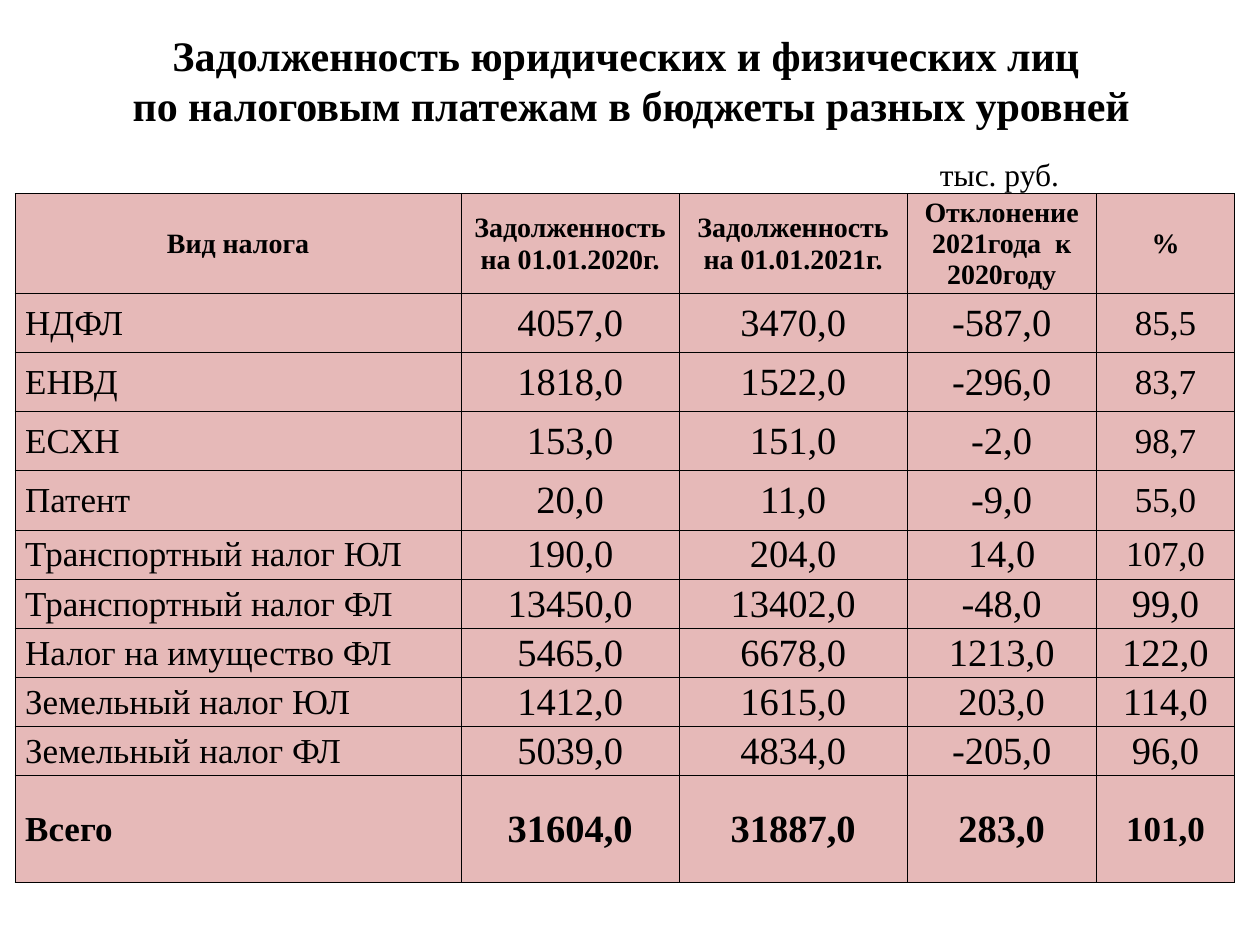
from dataclasses import dataclass

from lxml import etree
from pptx import Presentation
from pptx.dml.color import RGBColor
from pptx.enum import text
from pptx.oxml import ns
from pptx.util import Inches, Pt


@dataclass(frozen=True)
class Theme:
    font: str = "Times New Roman"
    ink: str = "000000"
    cell: str = "E6B9B8"
    title: int = 24
    unit: int = 18
    header: int = 16
    label: int = 20
    value: int = 22
    border: float = 0.5


THEME = Theme()

TITLE = ["Задолженность юридических и физических лиц ",
         "по налоговым платежам в бюджеты разных уровней"]
UNIT = "тыс. руб."
UNIT_COL = 3
HEADERS = ["Вид налога", "Задолженность на 01.01.2020г.",
           "Задолженность на 01.01.2021г.",
           "Отклонение 2021года  к 2020году", "%"]
# Tax, debt in 2020, debt in 2021, change, percent, size of the percent
TAXES = [
    ("НДФЛ", "4057,0", "3470,0", "-587,0", "85,5", THEME.label),
    ("ЕНВД", "1818,0", "1522,0", "-296,0", "83,7", THEME.label),
    ("ЕСХН", "153,0", "151,0", "-2,0", "98,7", THEME.label),
    ("Патент", "20,0", "11,0", "-9,0", "55,0", THEME.label),
    ("Транспортный налог ЮЛ", "190,0", "204,0", "14,0", "107,0", THEME.label),
    ("Транспортный налог ФЛ", "13450,0", "13402,0", "-48,0", "99,0", THEME.value),
    ("Налог на имущество ФЛ", "5465,0", "6678,0", "1213,0", "122,0", THEME.value),
    ("Земельный налог ЮЛ", "1412,0", "1615,0", "203,0", "114,0", THEME.value),
    ("Земельный налог ФЛ", "5039,0", "4834,0", "-205,0", "96,0", THEME.value),
    ("Всего", "31604,0", "31887,0", "283,0", "101,0", THEME.label),
]
COL_WIDTHS = [3.54, 1.73, 1.81, 1.5, 1.1]
ROW_HEIGHTS = [0.24, 0.79] + [0.47] * 4 + [0.39] * 5 + [0.85]


def add_run(p, words, size, bold=False):
    r = p.add_run()
    r.text = words
    r.font.name = THEME.font
    r.font.size = Pt(size)
    r.font.bold = bold
    r.font.color.rgb = RGBColor.from_string(THEME.ink)


def set_title(s):
    title = s.shapes.title
    title.left, title.top = Inches(0.51), Inches(0.13)
    title.width, title.height = Inches(9), Inches(1.01)
    tf = title.text_frame
    tf.word_wrap = True
    tf.vertical_anchor = text.MSO_ANCHOR.MIDDLE
    p = tf.paragraphs[0]
    p.alignment = text.PP_ALIGN.CENTER
    for i, line in enumerate(TITLE):
        if i:
            p.add_line_break()
        add_run(p, line, THEME.title, bold=True)


def set_borders(cell, sides):
    """Draw the given sides (L, R, T, B); call before the cell is filled."""
    props = cell._tc.get_or_add_tcPr()
    for side in sides:
        line = etree.SubElement(props, ns.qn(f"a:ln{side}"), w=str(Pt(THEME.border)))
        fill = etree.SubElement(line, ns.qn("a:solidFill"))
        etree.SubElement(fill, ns.qn("a:srgbClr"), val=THEME.ink)


def set_margins(cell, left=0.01):
    cell.margin_left = Inches(left)
    cell.margin_right = cell.margin_top = Inches(0.01)
    cell.margin_bottom = 0


def fill_cell(cell, words, size, bold=False, label=False):
    set_margins(cell, 0.08 if label else 0.01)
    cell.vertical_anchor = text.MSO_ANCHOR.MIDDLE
    set_borders(cell, "LRTB")
    cell.fill.solid()
    cell.fill.fore_color.rgb = RGBColor.from_string(THEME.cell)
    p = cell.text_frame.paragraphs[0]
    p.alignment = text.PP_ALIGN.LEFT if label else text.PP_ALIGN.CENTER
    add_run(p, words, size, bold)


def fill_unit_row(table):
    for col in range(len(COL_WIDTHS)):
        cell = table.cell(0, col)
        set_borders(cell, "B")
        cell.fill.background()
        p = cell.text_frame.paragraphs[0]
        if col == UNIT_COL:
            set_margins(cell, 0.26)
            cell.vertical_anchor = text.MSO_ANCHOR.BOTTOM
            add_run(p, UNIT, THEME.unit)
        else:
            set_margins(cell)
            # An empty cell takes its least height from this size
            etree.SubElement(p._p, ns.qn("a:endParaRPr"), sz=str(THEME.header * 50))


def add_debt_table(s):
    frame = s.shapes.add_table(len(ROW_HEIGHTS), len(COL_WIDTHS),
                               Inches(0.12), Inches(1.25),
                               Inches(sum(COL_WIDTHS)), Inches(sum(ROW_HEIGHTS)))
    table = frame.table
    table.first_row = table.horz_banding = False
    for column, width in zip(table.columns, COL_WIDTHS):
        column.width = Inches(width)
    for row, height in zip(table.rows, ROW_HEIGHTS):
        row.height = Inches(height)

    fill_unit_row(table)
    for col, words in enumerate(HEADERS):
        fill_cell(table.cell(1, col), words, THEME.header, bold=True)
    for row, (*words, percent_size) in enumerate(TAXES, start=2):
        total = row == len(ROW_HEIGHTS) - 1
        sizes = [THEME.label] + [THEME.value] * 3 + [percent_size]
        for col, (word, size) in enumerate(zip(words, sizes)):
            fill_cell(table.cell(row, col), word, size, bold=total, label=col == 0)


def main():
    prs = Presentation()
    prs.slide_width, prs.slide_height = Inches(10), Inches(7.5)
    s = prs.slides.add_slide(prs.slide_layouts[5])
    set_title(s)
    add_debt_table(s)
    prs.save("out.pptx")


if __name__ == "__main__":
    main()
